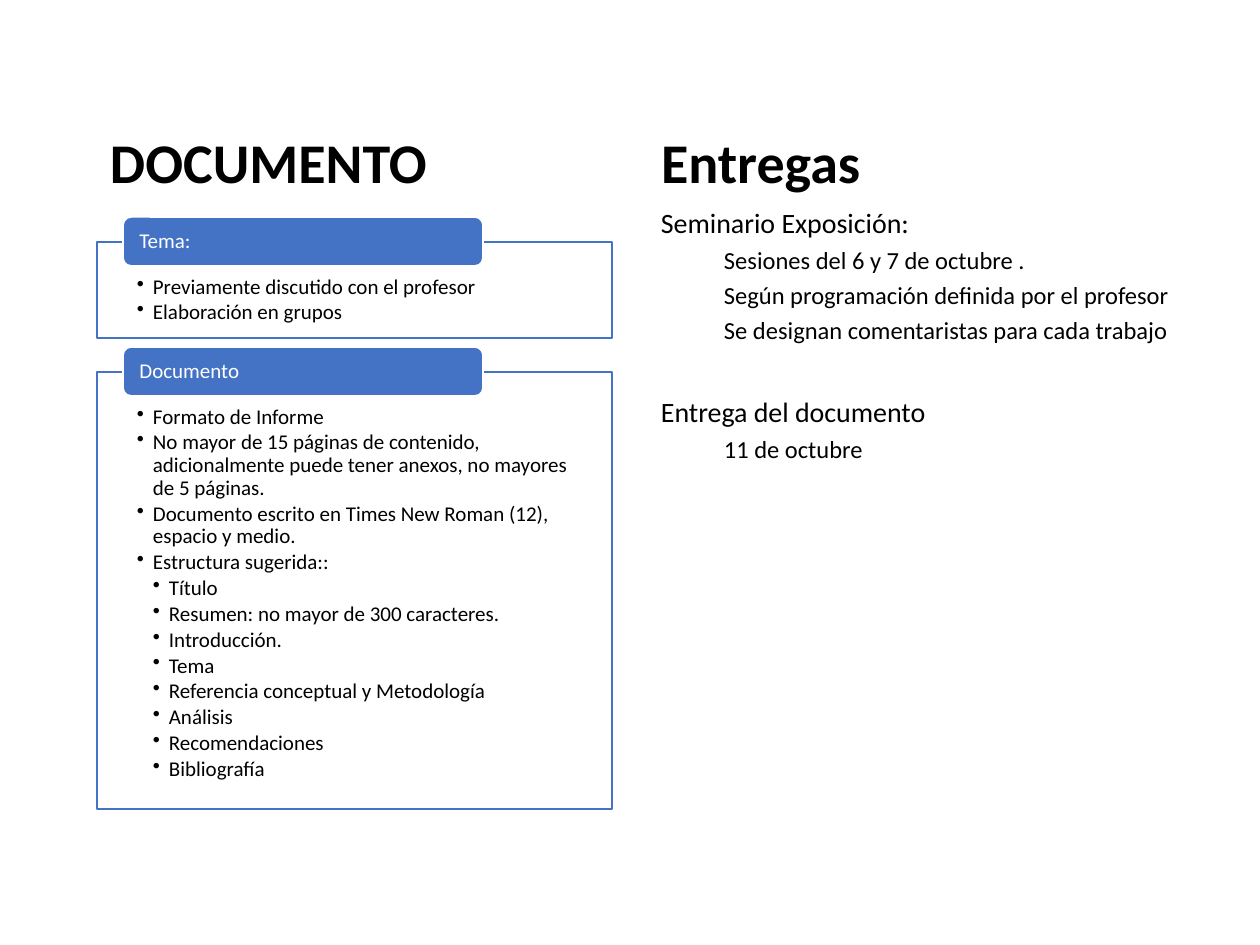
from lxml.etree import SubElement
from pptx import Presentation
from pptx.dml.color import RGBColor
from pptx.enum.shapes import MSO_SHAPE
from pptx.enum.text import MSO_ANCHOR, MSO_AUTO_SIZE, PP_ALIGN
from pptx.oxml.ns import qn
from pptx.util import Emu, Pt

BLUE, WHITE, BLACK = "4472C4", "FFFFFF", "000000"
INDENT = 16

TOPICS = [
    ("Tema:", (97, 242, 515, 96), [
        (1, "Previamente discutido con el profesor"),
        (1, "Elaboración en grupos"),
    ]),
    ("Documento", (97, 372, 515, 437), [
        (1, "Formato de Informe"),
        (1, "No mayor de 15 páginas de contenido, adicionalmente puede tener "
            "anexos, no mayores de 5 páginas."),
        (1, "Documento escrito en Times New Roman (12), espacio y medio."),
        (1, "Estructura sugerida::"),
        (2, "Título"),
        (2, "Resumen: no mayor de 300 caracteres."),
        (2, "Introducción."),
        (2, "Tema"),
        (2, "Referencia conceptual y Metodología"),
        (2, "Análisis"),
        (2, "Recomendaciones"),
        (2, "Bibliografía"),
    ]),
]

DELIVERIES = [
    ("Seminario Exposición:", 10, [
        "Sesiones del 6 y 7 de octubre .",
        "Según programación definida por el profesor",
        "Se designan comentaristas para cada trabajo",
    ]),
    ("Entrega del documento", 30.4, ["11 de octubre"]),
]


def px(length):
    """Turn pixels into EMU at 126 pixels to the inch."""
    return Emu(round(length * 914400 / 126))


def color(hex_text):
    """Turn a hex string into a colour."""
    return RGBColor.from_string(hex_text)


def prepare_frame(shape, anchor, insets=(13, 6, 13, 6)):
    """Set wrapping, anchor and insets of a shape's text."""
    frame = shape.text_frame
    frame.word_wrap = True
    frame.auto_size = MSO_AUTO_SIZE.NONE
    frame.vertical_anchor = anchor
    (frame.margin_left, frame.margin_top,
     frame.margin_right, frame.margin_bottom) = map(px, insets)
    return frame


def add_para(frame, text, size, ink=BLACK, bold=False, before=0, after=0):
    """Write one paragraph, using the frame's first one while it is empty."""
    first = frame.paragraphs[0]
    para = frame.add_paragraph() if first.runs else first
    para.alignment = PP_ALIGN.LEFT
    para.line_spacing = 0.9
    para.space_before, para.space_after = Pt(before), Pt(after)
    span = para.add_run()
    span.text = text
    span.font.name = "Calibri"
    span.font.size = Pt(size)
    span.font.bold = bold
    span.font.color.rgb = color(ink)
    return para


def set_indent(para, left, hanging=0):
    """Set the left margin and hanging indent of a paragraph."""
    properties = para._p.get_or_add_pPr()
    properties.set("marL", str(px(left)))
    properties.set("indent", str(-px(hanging)))
    return properties


def add_panel(page, kind, box, fill, line):
    """Add a filled and outlined shape without a shadow."""
    shape = page.shapes.add_shape(kind, *map(px, box))
    shape.shadow.inherit = False
    shape.fill.solid()
    shape.fill.fore_color.rgb = color(fill)
    shape.line.color.rgb = color(line)
    shape.line.width = Pt(1)
    return shape


def write_heading(shape, box, text):
    """Place a heading and write its bold text."""
    shape.left, shape.top, shape.width, shape.height = map(px, box)
    add_para(prepare_frame(shape, MSO_ANCHOR.BOTTOM), text, 32, bold=True, before=10)


def add_topic(page, box, label, items):
    """Draw a bulleted box with its label tab over the top edge."""
    left, top, width, height = box
    panel = add_panel(page, MSO_SHAPE.RECTANGLE, box, WHITE, BLUE)
    fill_color = panel.fill._xPr.find(qn("a:solidFill"))[0]
    SubElement(fill_color, qn("a:alpha"), val="90000")
    frame = prepare_frame(panel, MSO_ANCHOR.TOP, (40, 34, 40, 11))
    for level, text in items:
        para = add_para(frame, text, 12, after=1.8)
        para.level = level
        properties = set_indent(para, INDENT * level, INDENT)
        SubElement(properties, qn("a:buChar"), char="•")
    tab_box = (left + 26, top - 25, round(width * 0.7), 49)
    tab = add_panel(page, MSO_SHAPE.ROUNDED_RECTANGLE, tab_box, BLUE, WHITE)
    add_para(prepare_frame(tab, MSO_ANCHOR.MIDDLE, (14, 0, 14, 0)), label, 12, WHITE)


def add_deliveries(page, box, groups):
    """Write the deliveries, each followed by its indented details."""
    shape = page.shapes.add_textbox(*map(px, box))
    frame = prepare_frame(shape, MSO_ANCHOR.TOP)
    for heading, gap, details in groups:
        add_para(frame, heading, 16, before=gap)
        for detail in details:
            para = add_para(frame, detail, 14, before=5)
            para.level = 1
            set_indent(para, 63)


def main():
    """Build the slide and save the deck."""
    deck = Presentation()
    deck.slide_width, deck.slide_height = px(1260), px(945)
    page = deck.slides.add_slide(deck.slide_layouts[5])
    write_heading(page.shapes.title, (97, 89, 533, 113), "DOCUMENTO")
    for label, box, items in TOPICS:
        add_topic(page, box, label, items)
    right_box = (648, 89, 536, 113)
    write_heading(page.shapes.add_textbox(*map(px, right_box)), right_box, "Entregas")
    add_deliveries(page, (648, 203, 570, 621), DELIVERIES)
    deck.save("out.pptx")


if __name__ == "__main__":
    main()
